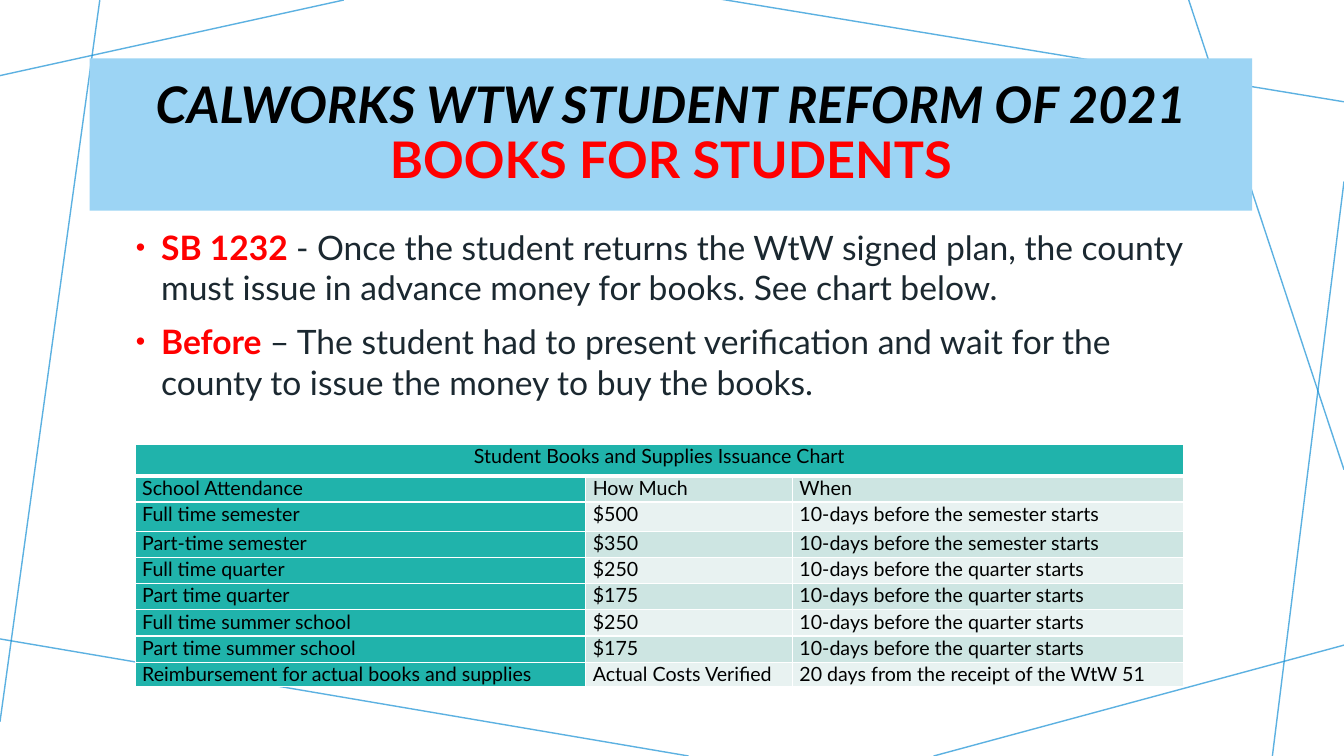
from lxml import etree
from pptx import Presentation
from pptx import util as u
from pptx.dml.color import RGBColor
from pptx.enum import shapes, text
from pptx.oxml.ns import qn

FONT = "Lato"
INK, RED, WHITE = "000000", "FF0000", "FFFFFF"
TEAL, MINT, PALE = "20B3AB", "CDE5E2", "E8F2F1"

RAYS = [
    (3.41, 0, 0, 0.75),
    (0.99, 0, 0, 7.16),
    (6.83, 7.5, -0.05, 6.33),
    (13.33, 6.4, 9.26, 7.5),
    (13.33, 1.8, 12.62, 7.5),
    (13.33, 4.66, 11.79, 0),
    (13.33, 1.01, 7.14, -0.01),
]
POINTS = [
    ("SB 1232 ", "- Once the student returns the WtW signed plan, the county "
     "must issue in advance money for books. See chart below."),
    ("Before ", "– The student had to present verification and wait for the "
     "county to issue the money to buy the books."),
]
SEM = "10-days before the semester starts"
TERM = "10-days before the quarter starts"
ROWS = [
    ("Student Books and Supplies Issuance Chart",),
    ("School Attendance", "How Much", "When"),
    ("Full time semester", "$500", SEM),
    ("Part-time semester", "$350", SEM),
    ("Full time quarter", "$250", TERM),
    ("Part time quarter", "$175", TERM),
    ("Full time summer school", "$250", TERM),
    ("Part time summer school", "$175", TERM),
    ("Reimbursement for actual books and supplies", "Actual Costs Verified",
     "20 days from the receipt of the WtW 51"),
]
WIDTHS = [4.47, 2.05, 3.88]
HEIGHTS = [0.31, 0.26, 0.29] + [0.26] * 5 + [0.24]


def tint(part, code):
    """Give a fill or a font a solid colour."""
    if hasattr(part, "solid"):
        part.solid()
        part = part.fore_color
    else:
        part = part.color
    part.rgb = RGBColor.from_string(code)


def assign(part, **vals):
    """Set several attributes on one object."""
    for name, val in vals.items():
        setattr(part, name, val)


def write(para, words, size, code, **style):
    """Add a run of text to a paragraph."""
    run = para.add_run()
    run.text = words
    assign(run.font, name=FONT, size=u.Pt(size), **style)
    tint(run.font, code)


def ray(slide, ends):
    """Draw one thin translucent line of the backdrop."""
    line = slide.shapes.add_connector(
        shapes.MSO_CONNECTOR.STRAIGHT, *[u.Inches(n) for n in ends])
    line.line.width = u.Pt(1)
    tint(line.line.fill, "1790D5")
    props = line._element.spPr
    hue = props.find(".//" + qn("a:srgbClr"))
    etree.SubElement(hue, qn("a:alpha"), val="70000")
    etree.SubElement(props, qn("a:effectLst"))


def banner(slide):
    """Draw the title band."""
    box = slide.shapes.add_shape(
        shapes.MSO_SHAPE.RECTANGLE,
        *[u.Inches(n) for n in (0.89, 0.58, 11.53, 1.51)])
    box.shadow.inherit = False
    tint(box.fill, "9CD4F4")
    box.line.fill.background()
    frame = box.text_frame
    assign(frame, word_wrap=True, vertical_anchor=text.MSO_ANCHOR.MIDDLE)
    para = frame.paragraphs[0]
    assign(para, alignment=text.PP_ALIGN.CENTER, line_spacing=0.9)
    write(para, "CALWORKS WTW STUDENT REFORM OF 2021 ", 36, INK,
          bold=True, italic=True)
    write(para, "BOOKS FOR STUDENTS", 36, RED, bold=True)


def bullet(para):
    """Give a paragraph a hanging bullet."""
    props = para._p.get_or_add_pPr()
    props.set("marL", str(u.Inches(0.25)))
    props.set("indent", str(u.Inches(-0.25)))
    etree.SubElement(props, qn("a:buSzPct"), val="80000")
    etree.SubElement(props, qn("a:buFont"), typeface="Arial")
    etree.SubElement(props, qn("a:buChar"), char="•")


def points(slide):
    """Write the bulleted text."""
    box = slide.shapes.add_textbox(
        *[u.Inches(n) for n in (1.25, 2.2, 10.83, 4.82)])
    frame = box.text_frame
    frame.word_wrap = True
    for i, (lead, rest) in enumerate(POINTS):
        para = frame.add_paragraph() if i else frame.paragraphs[0]
        para.space_before = u.Pt(10)
        bullet(para)
        write(para, lead, 24, RED, bold=True)
        write(para, rest, 24, "1B2830")


def edge(cell, base):
    """Draw white borders round a cell."""
    props = cell._tc.get_or_add_tcPr()
    for i, (side, width) in enumerate(zip("LRTB", (1, 1, 1, base))):
        line = etree.Element(qn("a:ln" + side), w=str(u.Pt(width)))
        fill = etree.SubElement(line, qn("a:solidFill"))
        etree.SubElement(fill, qn("a:srgbClr"), val=WHITE)
        props.insert(i, line)


def chart(slide):
    """Build the issuance table."""
    table = slide.shapes.add_table(
        len(ROWS), len(WIDTHS), u.Inches(1.34), u.Inches(4.41),
        u.Inches(sum(WIDTHS)), u.Inches(sum(HEIGHTS))).table
    assign(table, first_row=False, horz_banding=False)
    for col, width in zip(table.columns, WIDTHS):
        col.width = u.Inches(width)
    table.cell(0, 0).merge(table.cell(0, 2))
    for r, row in enumerate(ROWS):
        table.rows[r].height = u.Inches(HEIGHTS[r])
        for c in range(len(WIDTHS)):
            cell = table.cell(r, c)
            pad = u.Inches(0.07)
            assign(cell, margin_left=pad, margin_right=pad,
                   margin_top=0, margin_bottom=0)
            band = MINT if r % 2 else PALE
            tint(cell.fill, TEAL if r == 0 or c == 0 else band)
            edge(cell, 1 if r else 3)
            para = cell.text_frame.paragraphs[0]
            align = text.PP_ALIGN
            para.alignment = align.JUSTIFY if r else align.CENTER
            if c < len(row):
                write(para, row[c], 14, INK)


def main():
    """Build and save the slide."""
    deck = Presentation()
    assign(deck, slide_width=u.Inches(13.33), slide_height=u.Inches(7.5))
    slide = deck.slides.add_slide(deck.slide_layouts[6])
    tint(slide.background.fill, WHITE)
    for ends in RAYS:
        ray(slide, ends)
    points(slide)
    banner(slide)
    chart(slide)
    deck.save("out.pptx")


if __name__ == "__main__":
    main()
